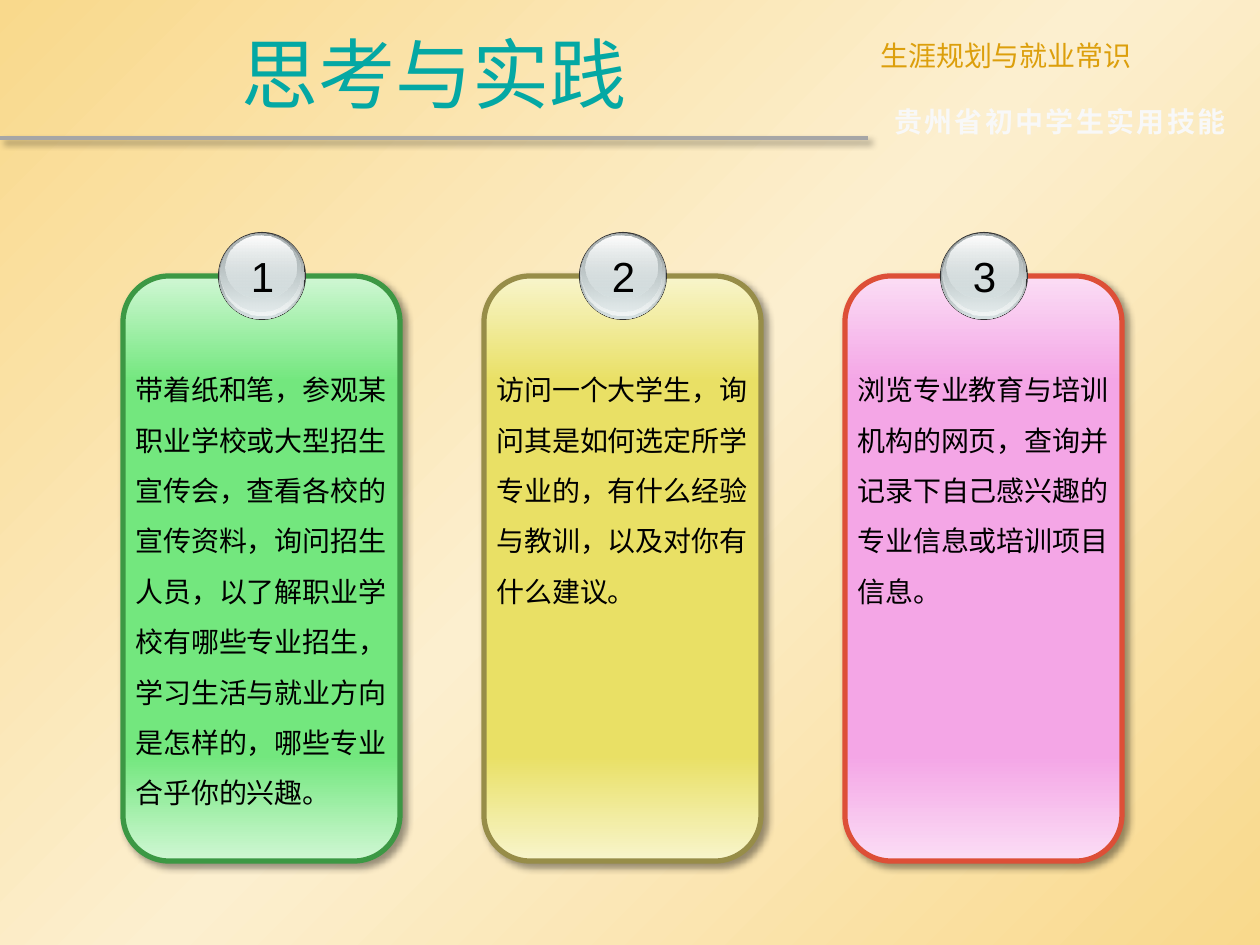
"""Build the "思考与实践" slide: a title band and three numbered task cards."""
from lxml.etree import SubElement
from pptx import Presentation
from pptx.dml.color import RGBColor
from pptx.enum.shapes import MSO_CONNECTOR, MSO_SHAPE
from pptx.enum.text import MSO_ANCHOR, PP_ALIGN
from pptx.oxml.ns import qn
from pptx.util import Emu, Pt

COLORS = {
    "title": "04A8A4", "course": "DC9F0C", "series": "F8F8F8",
    "rule": "A6A6A6", "text": "000000", "rim": "333333",
}
CJK, LATIN = "Noto Sans CJK SC", "Arial"
BACKGROUND = [(0, "F9D98C"), (50, "FCEFCF"), (100, "F9D98C")]

TITLE = "思考与实践"
COURSE = "生涯规划与就业常识"
SERIES = "贵州省初中学生实用技能"
CARDS = [
    {"text": "带着纸和笔，参观某职业学校或大型招生宣传会，查看各校的宣传资料，询问招生人员，"
             "以了解职业学校有哪些专业招生，学习生活与就业方向是怎样的，哪些专业合乎你的兴趣。",
     "edge": "D0F7D4", "fill": "73E77E", "line": "3C9844", "height": 465},
    {"text": "访问一个大学生，询问其是如何选定所学专业的，有什么经验与教训，以及对你有什么建议。",
     "edge": "F8F5CC", "fill": "E9E065", "line": "978D48", "height": 267},
    {"text": "浏览专业教育与培训机构的网页，查询并记录下自己感兴趣的专业信息或培训项目信息。",
     "edge": "FBDDF5", "fill": "F4A6E6", "line": "DD4F37", "height": 267},
]
BADGE = [
    ((95, 232, 88, 88), None),
    ((96, 233, 86, 86), [(0, "636869"), (100, "D6E1E2")]),
    ((97, 233, 83, 83), [(0, "D6E1E2", 0), (100, "F1F5F5")]),
    ((98, 234, 79, 78), [(0, "AAB2B3"), (100, "D6E1E2", 48)]),
    ((102, 236, 71, 63), [(0, "FFFFFF"), (100, "D6E1E2", 38)]),
]
CARD_LEFT, CARD_TOP, CARD_W, CARD_H, CARD_STEP = 123, 276, 277, 585, 361
TEXT_TOP = 350
NUMBER_BOX = (115, 244, 49, 63)


def px(*values):
    return [Emu(round(v * 914400 / 126)) for v in values]


def rgb(name):
    return RGBColor.from_string(COLORS.get(name, name))


def add_color(parent, color, alpha=100):
    clr = SubElement(parent, qn("a:srgbClr"), val=color)
    if alpha < 100:
        SubElement(clr, qn("a:alpha"), val=str(alpha * 1000))


def add_gradient(props, stops, angle):
    solid = props.find(qn("a:solidFill"))
    grad = SubElement(props, qn("a:gradFill"), rotWithShape="1")
    gs_list = SubElement(grad, qn("a:gsLst"))
    for pos, *color in stops:
        add_color(SubElement(gs_list, qn("a:gs"), pos=str(pos * 1000)), *color)
    SubElement(grad, qn("a:lin"), ang=str(angle * 60000), scaled="0")
    props.replace(solid, grad)


def add_shadow(props):
    effects = props.find(qn("a:effectLst"))
    if effects is None:
        effects = SubElement(props, qn("a:effectLst"))
    shadow = SubElement(effects, qn("a:outerShdw"), blurRad=str(Pt(4)), dist=str(Pt(3)),
                        dir=str(45 * 60000), algn="tl", rotWithShape="0")
    add_color(shadow, COLORS["text"], 40)


def add_shape(shapes, kind, box, stops=None, line=None):
    sp = shapes.add_shape(kind, *px(*box))
    sp.shadow.inherit = False
    sp.fill.solid()
    sp.fill.fore_color.rgb = rgb("rim")
    if stops:
        add_gradient(sp.element.spPr, stops, 90)
    if line:
        sp.line.color.rgb = rgb(line)
        sp.line.width = Pt(3)
    else:
        sp.line.fill.background()
    return sp


def set_text(sp, text, size, color, font=CJK, align=PP_ALIGN.LEFT, wrap=True):
    tf = sp.text_frame
    tf.word_wrap = wrap
    p = tf.paragraphs[0]
    p.text = text
    p.alignment = align
    p.font.size = Pt(size)
    p.font.name = font
    p.font.color.rgb = rgb(color)
    SubElement(p.font._element, qn("a:ea"), typeface=font)
    return p


def add_header(s):
    rule = s.shapes.add_connector(MSO_CONNECTOR.STRAIGHT, *px(0, 138, 868, 138))
    rule.line.color.rgb = rgb("rule")
    rule.line.width = Pt(2.25)
    add_shadow(rule._element.spPr)

    title = s.shapes.title
    title.left, title.top, title.width, title.height = px(0, 9, 868, 128)
    title.text_frame.vertical_anchor = MSO_ANCHOR.MIDDLE
    set_text(title, TITLE, 44, "title", align=PP_ALIGN.CENTER)

    course = s.shapes.add_textbox(*px(868, 32, 392, 47))
    set_text(course, COURSE, 16, "course", align=PP_ALIGN.JUSTIFY)

    series = s.shapes.add_textbox(*px(882, 98, 378, 47))
    p = set_text(series, SERIES, 16, "series", wrap=False)
    p.font.bold = True
    p.runs[0].font._element.set("spc", "140")


def add_card(s, index, card):
    left = CARD_LEFT + index * CARD_STEP
    shapes = s.shapes.add_group_shape().shapes
    edge, fill = card["edge"], card["fill"]
    stops = [(0, edge), (18, fill), (82, fill), (100, edge)]
    panel = add_shape(shapes, MSO_SHAPE.ROUNDED_RECTANGLE,
                      (left, CARD_TOP, CARD_W, CARD_H), stops, card["line"])
    add_shadow(panel.element.spPr)

    body = shapes.add_textbox(*px(left, TEXT_TOP, CARD_W, card["height"]))
    set_text(body, card["text"], 16, "text").line_spacing = 1.5

    for (x, *rest), shades in BADGE:
        add_shape(shapes, MSO_SHAPE.OVAL, (left + x, *rest), shades)
    x, *rest = NUMBER_BOX
    number = shapes.add_textbox(*px(left + x, *rest))
    set_text(number, str(index + 1), 24, "text", LATIN, PP_ALIGN.CENTER, wrap=False)


def main():
    prs = Presentation()
    prs.slide_width, prs.slide_height = px(1260, 945)
    s = prs.slides.add_slide(prs.slide_layouts[5])
    s.background.fill.solid()
    add_gradient(s.element.xpath(".//p:bgPr")[0], BACKGROUND, 45)
    add_header(s)
    for index, card in enumerate(CARDS):
        add_card(s, index, card)
    prs.save("out.pptx")


if __name__ == "__main__":
    main()
